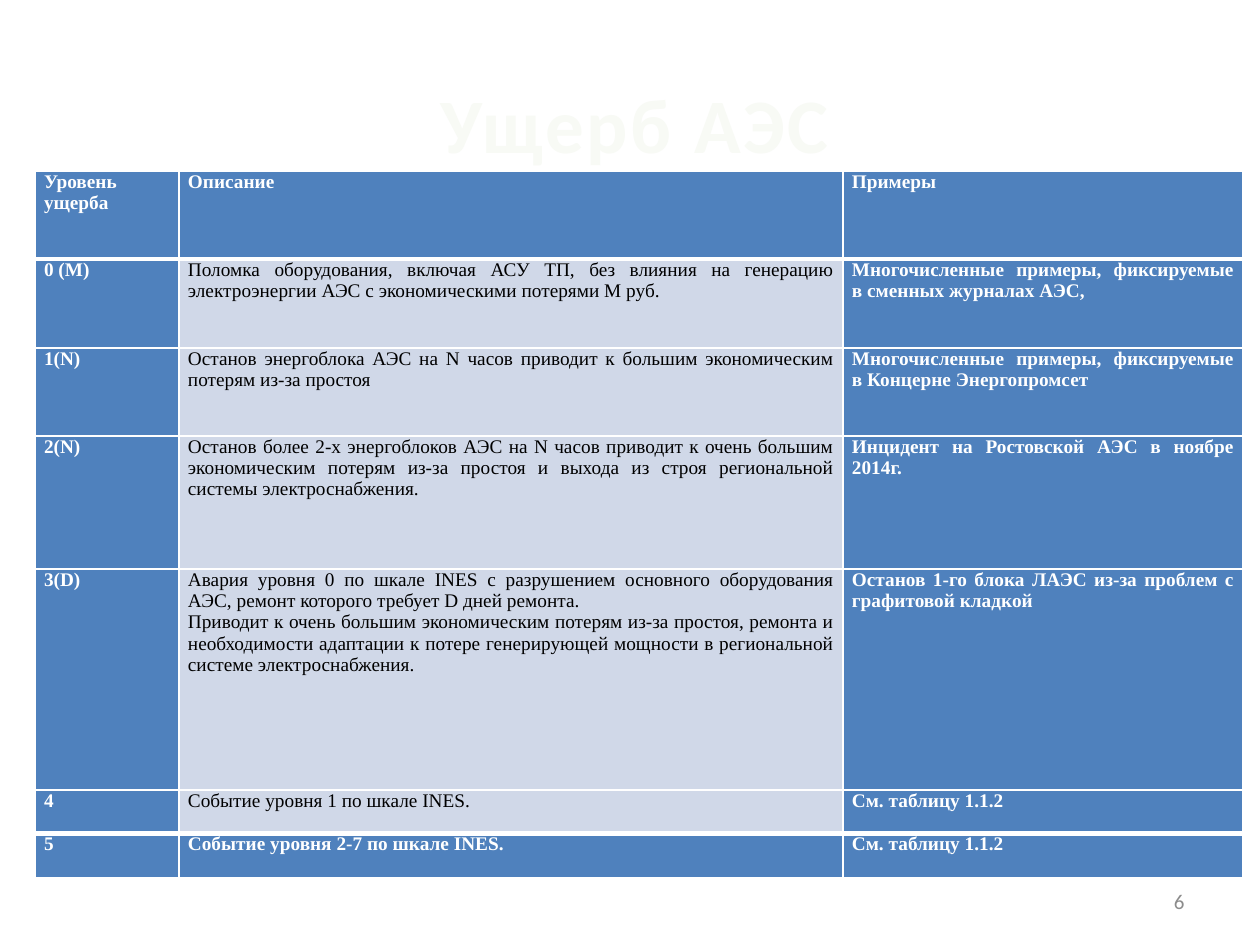
from lxml import etree
from pptx import Presentation
from pptx.dml.color import RGBColor
from pptx.enum.text import MSO_ANCHOR, PP_ALIGN
from pptx.oxml.ns import qn
from pptx.util import Pt

MIDDLE = MSO_ANCHOR.MIDDLE
CENTER, RIGHT, JUSTIFY = PP_ALIGN.CENTER, PP_ALIGN.RIGHT, PP_ALIGN.JUSTIFY
PX = 914400 // 126
WHITE, BLACK, BLUE, PALE = "FFFFFF", "000000", "4F81BD", "D0D8E8"

TITLE = "Ущерб АЭС"
PAGE_NUMBER = "6"
ROWS = [
    ("Уровень ущерба", "Описание", "Примеры"),
    ("0 (M)",
     "Поломка оборудования, включая АСУ ТП, без влияния на генерацию электроэнергии АЭС с экономическими потерями M руб.",
     "Многочисленные примеры, фиксируемые в сменных журналах АЭС,"),
    ("1(N)",
     "Останов энергоблока АЭС на N часов приводит к большим экономическим потерям из-за простоя",
     "Многочисленные примеры, фиксируемые в Концерне Энергопромсет"),
    ("2(N)",
     "Останов более 2-х энергоблоков АЭС на N часов приводит к очень большим экономическим потерям из-за простоя и выхода из строя региональной системы электроснабжения.",
     "Инцидент на Ростовской АЭС в ноябре 2014г."),
    ("3(D)",
     "Авария уровня 0 по шкале INES с разрушением основного оборудования АЭС, ремонт которого требует D дней ремонта.\n"
     "Приводит к очень большим экономическим потерям из-за простоя, ремонта и необходимости адаптации к потере генерирующей мощности в региональной системе электроснабжения.",
     "Останов 1-го блока ЛАЭС из-за проблем с графитовой кладкой"),
    ("4", "Событие уровня 1 по шкале INES.", "См. таблицу 1.1.2"),
    ("5", "Событие уровня 2-7 по шкале INES.", "См. таблицу 1.1.2"),
]
COLUMN_WIDTHS = [144, 664, 400]
ROW_HEIGHTS = [88, 89, 88, 133, 221, 44, 44]


def color(value):
    return RGBColor.from_string(value)


def place(box, left, top, width, height):
    box.left, box.top, box.width, box.height = (n * PX for n in (left, top, width, height))


def style(para, font, size, ink, bold, align):
    para.alignment = align
    para.font.name, para.font.size, para.font.bold = font, Pt(size), bold
    para.font.color.rgb = color(ink)


def set_borders(cell, top, bottom):
    properties = cell._tc.get_or_add_tcPr()
    widths = {"a:lnL": 1, "a:lnR": 1, "a:lnT": top, "a:lnB": bottom}
    for position, (tag, width) in enumerate(widths.items()):
        line = etree.Element(qn(tag), w=str(Pt(width)))
        fill = etree.SubElement(line, qn("a:solidFill"))
        etree.SubElement(fill, qn("a:srgbClr"), val=WHITE)
        properties.insert(position, line)


def add_title(page):
    box = page.shapes.title
    place(box, 68, 63, 1134, 120)
    box.text_frame.text = TITLE
    box.text_frame.vertical_anchor = MIDDLE
    para = box.text_frame.paragraphs[0]
    style(para, "Calibri", 44, "F8FAF5", True, CENTER)
    para.runs[0].font._element.set("spc", "150")


def add_damage_table(page):
    frame = page.shapes.add_table(len(ROWS), len(COLUMN_WIDTHS), 0, 0, PX, PX)
    place(frame, 35, 171, sum(COLUMN_WIDTHS), sum(ROW_HEIGHTS))
    table = frame.table
    for column, width in zip(table.columns, COLUMN_WIDTHS):
        column.width = width * PX
    for row, height in zip(table.rows, ROW_HEIGHTS):
        row.height = height * PX
    last = len(ROWS) - 1
    for r, texts in enumerate(ROWS):
        for c, text in enumerate(texts):
            cell = table.cell(r, c)
            plain = c == 1 and 0 < r < last
            cell.text = text
            cell.margin_left = cell.margin_right = 9 * PX
            cell.margin_top = cell.margin_bottom = 0
            cell.fill.solid()
            cell.fill.fore_color.rgb = color(PALE if plain else BLUE)
            set_borders(cell, 3 if r in (1, last) else 1, 3 if r in (0, last - 1) else 1)
            for para in cell.text_frame.paragraphs:
                style(para, "Times New Roman", 11, BLACK if plain else WHITE, not plain, JUSTIFY)


def add_page_number(page):
    box = page.shapes.add_textbox(0, 0, PX, PX)
    place(box, 903, 876, 294, 50)
    box.text_frame.word_wrap = True
    box.text_frame.vertical_anchor = MIDDLE
    box.text_frame.text = PAGE_NUMBER
    style(box.text_frame.paragraphs[0], "Calibri", 12, "8C8C8C", False, RIGHT)


def main():
    deck = Presentation()
    deck.slide_width, deck.slide_height = 1260 * PX, 945 * PX
    page = deck.slides.add_slide(deck.slide_layouts[5])
    add_title(page)
    add_page_number(page)
    add_damage_table(page)
    deck.save("out.pptx")


if __name__ == "__main__":
    main()
